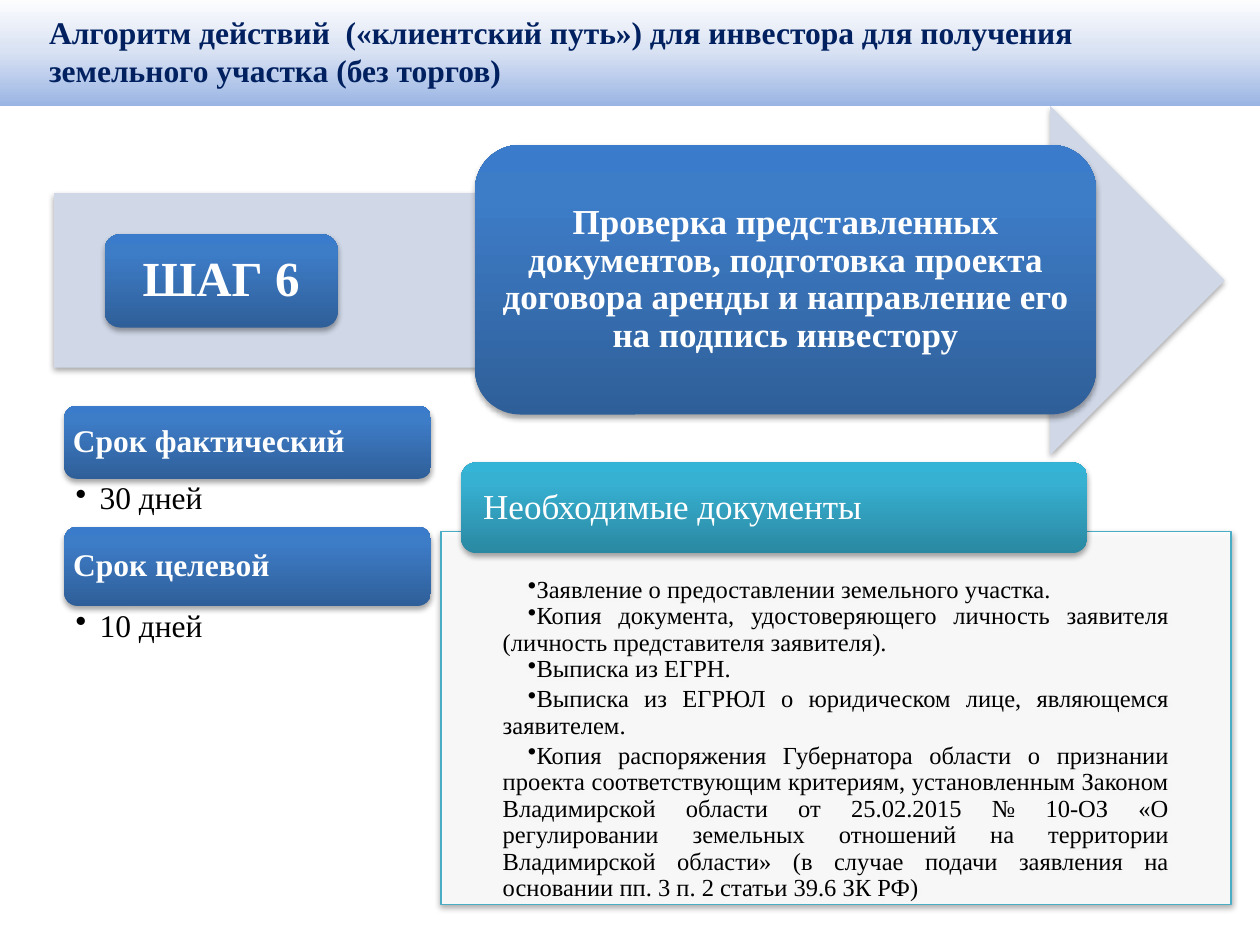
from copy import deepcopy

from lxml import etree
from pptx import Presentation
from pptx.dml.color import RGBColor
from pptx.enum import shapes, text
from pptx.oxml import ns
from pptx.util import Inches, Pt

COLORS = {
    "white": "FFFFFF", "black": "000000", "navy": "002060",
    "arrow": "D0D8E8", "border": "4BACC6",
}
GRADIENTS = {
    "blue": [(0, "2F5F99"), (0.8, "3D7CC7"), (1, "3A7CCB")],
    "teal": [(0, "2A88A2"), (0.8, "37B1D2"), (1, "34B4D6")],
    "header": [(0, "9AB5E4"), (0.5, "D9E2F3"), (1, "FFFFFF")],
}
SHAPE = shapes.MSO_SHAPE
ALIGN = text.PP_ALIGN
ANCHOR = text.MSO_ANCHOR

presentation = Presentation()
presentation.slide_width = Inches(10)
presentation.slide_height = Inches(7.5)
slide = presentation.slides.add_slide(presentation.slide_layouts[6])


def add_shape(kind, box, fill, shadow=True):
    shape = slide.shapes.add_shape(kind, *map(Inches, box))
    shape.line.fill.background()
    if fill in GRADIENTS:
        shape.fill.gradient()
        shape.fill.gradient_angle = 90
        stop_list = shape._element.spPr.find(".//" + ns.qn("a:gsLst"))
        stop_list.append(deepcopy(stop_list[0]))
        for stop, (position, color) in zip(shape.fill.gradient_stops, GRADIENTS[fill]):
            stop.position = position
            stop.color.rgb = RGBColor.from_string(color)
    else:
        shape.fill.solid()
        shape.fill.fore_color.rgb = RGBColor.from_string(COLORS[fill])
    shape.shadow.inherit = False
    if shadow:
        effects = shape._element.spPr.find(ns.qn("a:effectLst"))
        outer = etree.SubElement(effects, ns.qn("a:outerShdw"), blurRad="40000",
                                 dist="23000", dir="5400000", rotWithShape="0")
        color = etree.SubElement(outer, ns.qn("a:srgbClr"), val=COLORS["black"])
        etree.SubElement(color, ns.qn("a:alpha"), val="35000")
    return shape


def write(shape, lines, size, color, bold=False, align=ALIGN.LEFT, anchor=ANCHOR.MIDDLE,
          insets=(0, 0, 0, 0), spacing=0.9, bullet=None):
    frame = shape.text_frame
    frame.word_wrap = True
    frame.vertical_anchor = anchor
    (frame.margin_left, frame.margin_top,
     frame.margin_right, frame.margin_bottom) = map(Inches, insets)
    for index, line in enumerate(lines):
        paragraph = frame.paragraphs[0] if index == 0 else frame.add_paragraph()
        paragraph.text = line
        paragraph.alignment = align
        paragraph.line_spacing = spacing
        paragraph.font.name = "Times New Roman"
        paragraph.font.size = Pt(size)
        paragraph.font.bold = bold
        paragraph.font.color.rgb = RGBColor.from_string(COLORS[color])
        if bullet:
            properties = paragraph._p.get_or_add_pPr()
            margin, indent = bullet
            properties.set("marL", str(Inches(margin)))
            properties.set("indent", str(Inches(indent)))
            mark = etree.Element(ns.qn("a:buChar"), char="•")
            properties.find(ns.qn("a:defRPr")).addprevious(mark)


add_shape(SHAPE.RIGHT_ARROW, (0.43, 0.84, 9.29, 2.77), "arrow")

step = add_shape(SHAPE.ROUNDED_RECTANGLE, (0.83, 1.86, 1.85, 0.74), "blue")
write(step, ["ШАГ 6"], 28, "white", bold=True, align=ALIGN.CENTER)

action = add_shape(SHAPE.ROUNDED_RECTANGLE, (3.77, 1.15, 4.93, 2.14), "blue")
write(action, ["Проверка представленных документов, подготовка проекта договора "
               "аренды и направление его на подпись инвестору"],
      20, "white", bold=True, align=ALIGN.CENTER)

terms = [
    (3.22, 0.58, "Срок фактический", "30 дней"),
    (4.18, 0.63, "Срок целевой", "10 дней"),
]
for top, height, label, duration in terms:
    heading = add_shape(SHAPE.ROUNDED_RECTANGLE, (0.51, top, 2.91, height), "blue")
    write(heading, [label], 18, "white", bold=True, insets=(0.04, 0, 0.04, 0))
    value = slide.shapes.add_textbox(*map(Inches, (0.51, top + height, 2.91, 0.38)))
    write(value, [duration], 18, "black", anchor=ANCHOR.TOP,
          insets=(0.09, 0.03, 0.14, 0.03), bullet=(0.19, -0.19))

header = add_shape(SHAPE.RECTANGLE, (0, -0.03, 10, 0.87), "header", shadow=False)
write(header, ["Алгоритм действий  («клиентский путь») для инвестора для получения\v"
               "земельного участка (без торгов)"],
      18, "navy", bold=True, insets=(0.39, 0.05, 0.1, 0.05), spacing=1.0)

panel = add_shape(SHAPE.RECTANGLE, (3.5, 4.22, 6.27, 2.96), "white")
panel_color = panel._element.spPr.find(ns.qn("a:solidFill"))[0]
etree.SubElement(panel_color, ns.qn("a:alpha"), val="90000")
panel.line.color.rgb = RGBColor.from_string(COLORS["border"])
panel.line.width = Pt(0.75)
documents = [
    "Заявление о предоставлении земельного участка.",
    "Копия документа, удостоверяющего личность заявителя (личность представителя заявителя).",
    "Выписка из ЕГРН.",
    "Выписка из ЕГРЮЛ о юридическом лице, являющемся заявителем.",
    "Копия распоряжения Губернатора области о признании проекта соответствующим критериям, "
    "установленным Законом Владимирской области от 25.02.2015 № 10-ОЗ «О регулировании "
    "земельных отношений на территории Владимирской области» (в случае подачи заявления "
    "на основании пп. 3 п. 2 статьи 39.6 ЗК РФ)",
]
write(panel, documents, 14, "black", align=ALIGN.JUSTIFY, anchor=ANCHOR.TOP,
      insets=(0.49, 0.36, 0.49, 0.11), bullet=(0, 0.2))
for paragraph in panel.text_frame.paragraphs[2:]:
    paragraph.space_after = Pt(2)

caption = add_shape(SHAPE.ROUNDED_RECTANGLE, (3.66, 3.67, 4.97, 0.72), "teal")
write(caption, ["Необходимые документы"], 20, "white", insets=(0.14, 0, 0.14, 0))

presentation.save("out.pptx")
